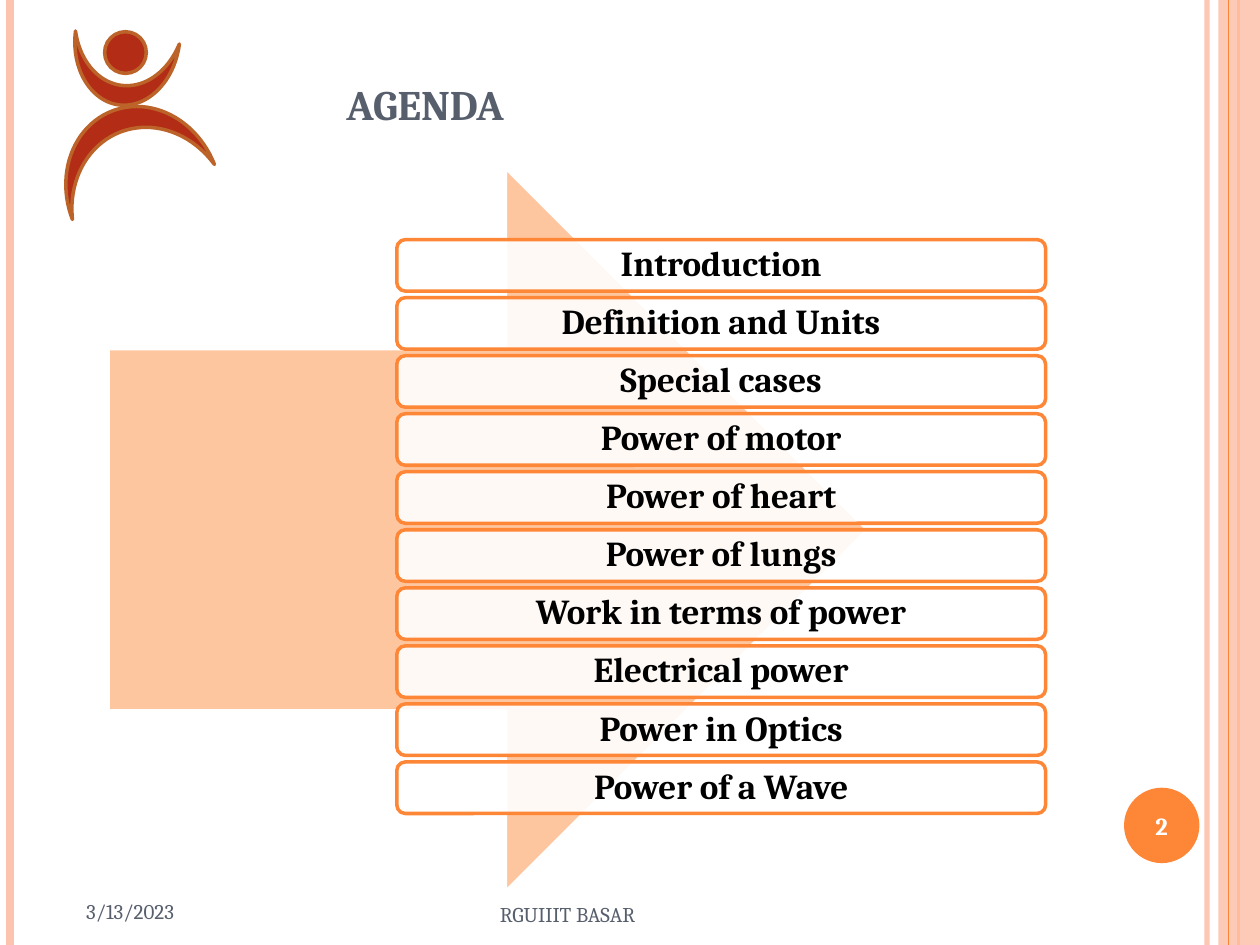
from lxml.etree import SubElement
from pptx import Presentation
from pptx.dml.color import RGBColor
from pptx.enum.shapes import MSO_CONNECTOR, MSO_SHAPE
from pptx.enum.text import MSO_ANCHOR, PP_ALIGN
from pptx.oxml.ns import qn
from pptx.util import Cm, Pt

SLIDE_W, SLIDE_H = 25.4, 19.05
ORANGE, PEACH, PINK = "FE8637", "FEC49C", "FEC3AE"
SLATE, RED, BROWN = "575F6D", "B32C16", "BC6329"
WHITE, BLACK = "FFFFFF", "000000"
AGENDA = [
    "Introduction", "Definition and Units", "Special cases", "Power of motor",
    "Power of heart", "Power of lungs", "Work in terms of power",
    "Electrical power", "Power in Optics", "Power of a Wave",
]


def color(hex_code):
    return RGBColor.from_string(hex_code)


def set_opacity(color_format_owner, percent):
    """Add an alpha value to the solid colour below the given element."""
    srgb = color_format_owner.find(".//" + qn("a:srgbClr"))
    SubElement(srgb, qn("a:alpha")).set("val", str(percent * 1000))


def write_text(shape, text, size=12, ink=SLATE, bold=False, align=PP_ALIGN.LEFT,
               anchor=MSO_ANCHOR.MIDDLE, spacing=None, small_caps=False, inset=None):
    frame = shape.text_frame
    frame.word_wrap = True
    frame.vertical_anchor = anchor
    if inset is not None:
        frame.margin_left = frame.margin_right = Cm(inset)
        frame.margin_top = frame.margin_bottom = Cm(inset)
    paragraph = frame.paragraphs[0]
    paragraph.alignment = align
    if spacing:
        paragraph.line_spacing = spacing
    run = paragraph.add_run()
    run.text = text
    run.font.name = "Cambria"
    run.font.size = Pt(size)
    run.font.bold = bold
    run.font.color.rgb = color(ink)
    if small_caps:
        run.font._element.set("cap", "small")


def add_figure(slide, kind, box, fill, line=None, opacity=100, line_width=2):
    shape = slide.shapes.add_shape(kind, *map(Cm, box))
    shape.shadow.inherit = False
    shape.fill.solid()
    shape.fill.fore_color.rgb = color(fill)
    if opacity < 100:
        set_opacity(shape._element.spPr.find(qn("a:solidFill")), opacity)
    if line:
        shape.line.color.rgb = color(line)
        shape.line.width = Pt(line_width)
    else:
        shape.line.fill.background()
    return shape


def add_rule(slide, x, ink, width, opacity=100):
    """Draw a vertical line over the full slide height."""
    rule = slide.shapes.add_connector(MSO_CONNECTOR.STRAIGHT, Cm(x), 0, Cm(x), Cm(SLIDE_H))
    rule.line.color.rgb = color(ink)
    rule.line.width = Pt(width)
    if opacity < 100:
        set_opacity(rule.line._ln, opacity)
    SubElement(rule._element.spPr, qn("a:effectLst"))


def add_borders(slide, left, right):
    add_rule(slide, right - 1.07, PINK, 3, opacity=93)
    add_rule(slide, left + 0.2, PINK, 4.5)
    add_rule(slide, right - 0.43, ORANGE, 1.5)
    add_figure(slide, MSO_SHAPE.RECTANGLE, (right - 0.84, 0, 0.84, SLIDE_H), PINK, opacity=87)
    add_rule(slide, right - 0.63, ORANGE, 0.75)


def add_title(slide, left, top, width, height):
    title = slide.shapes.title
    title.left, title.top, title.width, title.height = map(Cm, (left, top, width, height))
    write_text(title, "agenda", size=30, bold=True, anchor=MSO_ANCHOR.BOTTOM, small_caps=True)


def add_footer(slide, left, top):
    date = slide.shapes.add_textbox(Cm(left), Cm(top), Cm(3.05), Cm(1.07))
    write_text(date, "3/13/2023", align=PP_ALIGN.RIGHT)
    place = slide.shapes.add_textbox(Cm(left + 9.12), Cm(top + 0.08), Cm(8.89), Cm(1.02))
    write_text(place, "RGUIIIT BASAR")
    badge = add_figure(slide, MSO_SHAPE.OVAL, (left + 21.95, top - 1.95, 1.52, 1.52), ORANGE)
    write_text(badge, "2", size=14, ink=WHITE, bold=True, align=PP_ALIGN.CENTER, inset=0)


def add_agenda(slide, left, top, width, height):
    """Place the evenly stepped topics over a broad arrow."""
    arrow_box = (left, top, width * 0.81, height)
    add_figure(slide, MSO_SHAPE.RIGHT_ARROW, arrow_box, PEACH, WHITE, opacity=96)
    topic_left, topic_height, step = 5.82, 1.04, 1.17
    first = top + (height - step * len(AGENDA)) / 2
    for row, topic in enumerate(AGENDA):
        topic_box = (left + topic_left, first + row * step, width - topic_left, topic_height)
        card = add_figure(slide, MSO_SHAPE.ROUNDED_RECTANGLE, topic_box, WHITE, ORANGE, opacity=90)
        write_text(card, topic, size=20, ink=BLACK, bold=True, align=PP_ALIGN.CENTER,
                   spacing=0.9, inset=0.2)


def add_dancer(slide, left, top):
    arms = add_figure(slide, MSO_SHAPE.MOON, (left + 0.1, top, 1.37, 2.11), RED, BROWN)
    arms.rotation, arms.adjustments[0] = 277.1, 0.29
    legs = add_figure(slide, MSO_SHAPE.MOON, (left, top + 1.14, 1.75, 3.07), RED, BROWN)
    legs.rotation, legs.adjustments[0] = 68.8, 0.26
    head_box = (left + 0.41, top + 0.26, 0.84, 0.84)
    add_figure(slide, MSO_SHAPE.FLOWCHART_CONNECTOR, head_box, RED, BROWN)


def main():
    deck = Presentation()
    deck.slide_width, deck.slide_height = Cm(SLIDE_W), Cm(SLIDE_H)
    slide = deck.slides.add_slide(deck.slide_layouts[5])
    add_borders(slide, 0, SLIDE_W)
    add_title(slide, 6.73, 1.19, 7.67, 1.57)
    add_footer(slide, 0.71, 17.83)
    add_agenda(slide, 2.18, 3.38, 18.9, 14.6)
    add_dancer(slide, 1.7, 0.38)
    deck.save("out.pptx")


if __name__ == "__main__":
    main()
